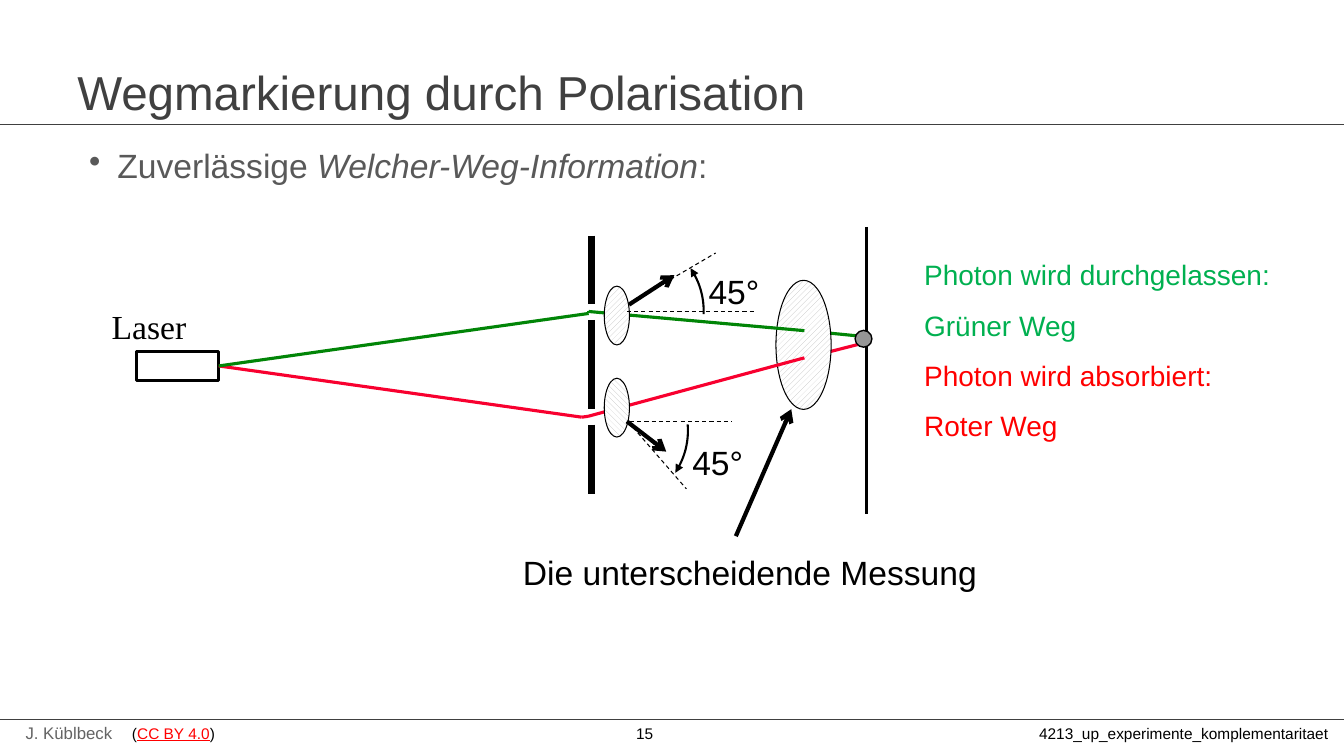
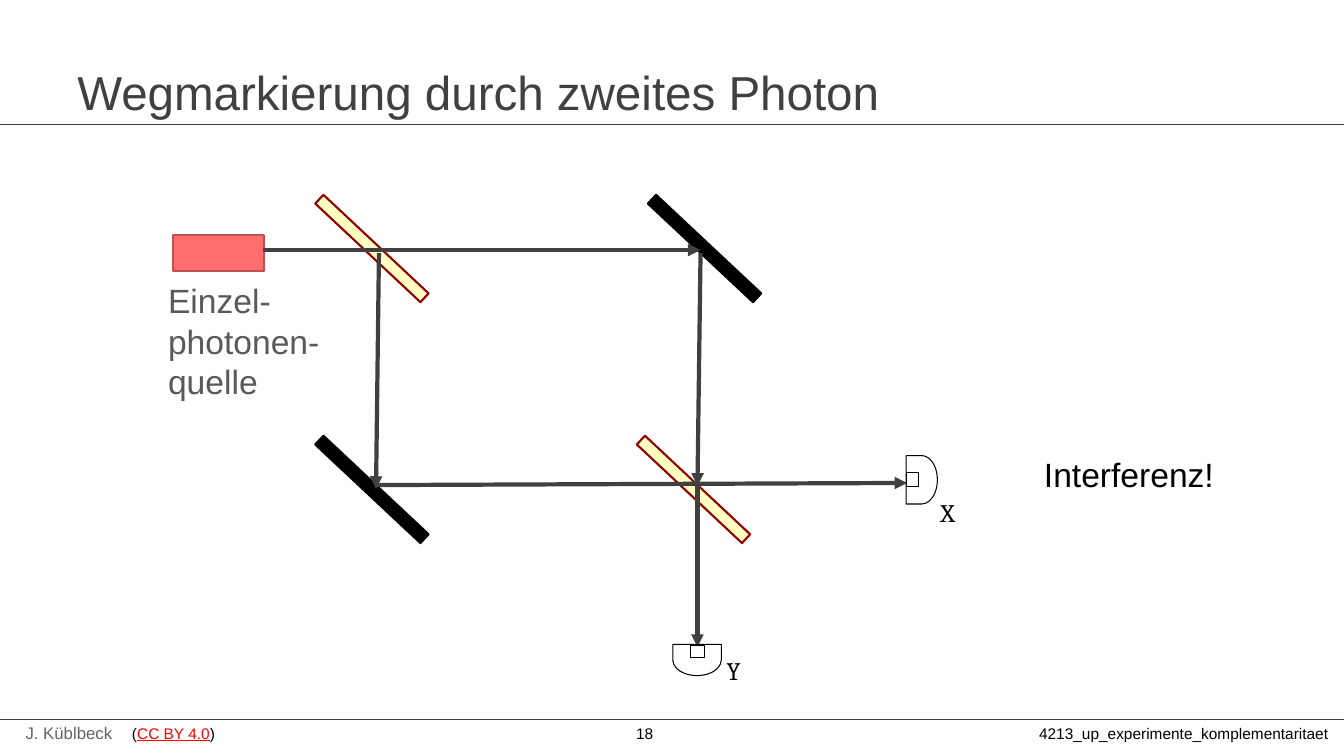
from pptx import Presentation
from pptx.dml.color import RGBColor
from pptx.enum import dml, shapes, text
from pptx.oxml.ns import qn
from pptx.util import Pt

WIDTH, HEIGHT = 960, 540
FONT = "Arial"
BLACK, WHITE, DARK, GREY = "000000", "FFFFFF", "404040", "595959"
GREEN, RED = "018507", "F8002F"
RECT, OVAL = shapes.MSO_SHAPE.RECTANGLE, shapes.MSO_SHAPE.OVAL


def colour(code):
    return RGBColor.from_string(code)


# Lines and shapes
def style_line(line, code, weight, head=None, dashed=False):
    line.color.rgb = colour(code)
    line.width = Pt(weight)
    if dashed:
        line.dash_style = dml.MSO_LINE.DASH
    if head:
        outline = line._get_or_add_ln()
        outline.append(outline.makeelement(qn("a:tailEnd"), {"type": head}))


def add_line(page, start, end, code=BLACK, weight=2.25, head=None, dashed=False):
    ends = [Pt(value) for value in (*start, *end)]
    connector = page.shapes.add_connector(shapes.MSO_CONNECTOR.STRAIGHT, *ends)
    properties = connector._element.spPr
    style_line(connector.line, code, weight, head, dashed)
    properties.append(properties.makeelement(qn("a:effectLst"), {}))
    return connector


def add_shape(page, kind, centre, size, fill=WHITE, line=BLACK, weight=0.75, rotation=0):
    (x, y), (width, height) = centre, size
    shape = page.shapes.add_shape(
        kind, Pt(x - width / 2), Pt(y - height / 2), Pt(width), Pt(height))
    shape.shadow.inherit = False
    shape.rotation = rotation
    shape.fill.solid()
    shape.fill.fore_color.rgb = colour(fill)
    style_line(shape.line, line, weight)
    return shape


def add_filter(page, centre, size, pattern=dml.MSO_PATTERN.WIDE_UPWARD_DIAGONAL):
    """Polarising filter: a hatched ellipse."""
    fill = add_shape(page, OVAL, centre, size).fill
    fill.patterned()
    fill.pattern = pattern
    fill.fore_color.rgb = colour("C0C0C0")
    fill.back_color.rgb = colour(WHITE)


def add_angle_arrow(page, start, bend, end, steps=16):
    """Curved arrow that leaves start, pulled towards bend."""
    points = []
    for step in range(steps + 1):
        t = step / steps
        points.append([Pt((1 - t) ** 2 * a + 2 * t * (1 - t) * b + t * t * c)
                       for a, b, c in zip(start, bend, end)])
    builder = page.shapes.build_freeform(*points[0])
    builder.add_line_segments(points[1:], close=False)
    arc = builder.convert_to_shape()
    arc.shadow.inherit = False
    arc.fill.background()
    style_line(arc.line, BLACK, 1.5, "triangle")


# Text
def style_font(font, size, code, name=FONT):
    font.name, font.size = name, Pt(size)
    font.color.rgb = colour(code)


def add_text(page, area, spans, size=24, code=BLACK, name=FONT, spacing=None,
             indent=0, before=0, inset=True, align=text.PP_ALIGN.LEFT):
    """One paragraph; spans is a list of strings. Returns the paragraph."""
    box = page.shapes.add_textbox(*[Pt(value) for value in area])
    frame = box.text_frame
    frame.word_wrap = True
    if not inset:
        frame.margin_left = frame.margin_right = 0
        frame.margin_top = frame.margin_bottom = 0
    para = frame.paragraphs[0]
    write_para(para, spans, size, code, name, spacing)
    para.alignment = align
    para.space_before = Pt(before)
    if indent:
        para._p.get_or_add_pPr().set("marL", str(Pt(indent)))
    return para


def write_para(para, spans, size, code, name=FONT, spacing=None):
    for words in spans:
        para.add_run().text = words
    style_font(para.font, size, code, name)
    if spacing:
        para.line_spacing = spacing


def add_bullet(para, hanging):
    properties = para._p.get_or_add_pPr()
    properties.set("indent", str(-Pt(hanging)))
    bullet = properties.makeelement(qn("a:buChar"), {"char": "•"})
    properties.insert_element_before(bullet, "a:tabLst", "a:defRPr", "a:extLst")


# Shared page frame: title, two rules, footer
def add_page(deck, title, number):
    page = deck.slides.add_slide(deck.slide_layouts[5])
    for y in (88.6, 514):
        add_line(page, (0, y), (WIDTH, y), DARK, 0.75)

    holder = page.shapes.title
    holder.left, holder.top, holder.width, holder.height = Pt(48), Pt(43), Pt(864), Pt(45)
    frame = holder.text_frame
    frame.text = title
    frame.auto_size = text.MSO_AUTO_SIZE.NONE
    frame.vertical_anchor = text.MSO_ANCHOR.MIDDLE
    frame.paragraphs[0].alignment = text.PP_ALIGN.LEFT
    style_font(frame.paragraphs[0].font, 34, DARK)

    add_text(page, (11.2, 512.6, 100, 22), ["J. Küblbeck"], 12, "646464")
    licence = add_text(page, (94.3, 517, 100, 14), ["(", "CC BY 4.0", ")"], 11, inset=False)
    link = licence.runs[1].font
    link.underline = True
    link.color.rgb = colour("FF0000")
    add_text(page, (454.3, 517, 40, 14), [str(number)], 11, inset=False)
    add_text(page, (649, 517, 300, 14), ["4213_up_experimente_komplementaritaet"], 11,
             inset=False, align=text.PP_ALIGN.RIGHT)
    return page


# Slide with double slit and polarising filters
def build_polarisation(deck):
    page = add_page(deck, "Wegmarkierung durch Polarisation", 15)
    intro = add_text(page, (48, 100, 864, 40),
                     ["Zuverlässige ", "Welcher-Weg-Information", ":"],
                     code=GREY, indent=28.8, before=3)
    intro.runs[1].font.italic = True
    add_bullet(intro, 20.2)

    # Beams behind and in front of the large filter
    add_line(page, (574.6, 236.2), (618.5, 240.5), GREEN)
    add_line(page, (581, 254.2), (617.8, 244.8), RED)
    add_filter(page, (574, 246.3), (39.4, 92.2))
    add_text(page, (72.7, 214.6, 110, 34), ["Laser"], name="Times New Roman")
    laser = add_shape(page, RECT, (127, 261.4), (58.6, 20.4), weight=2.25)
    for code, slit, bend, end in ((RED, (415.5, 298), (420, 297.4), (574.6, 255.6)),
                                  (GREEN, (420.5, 223.9), (420.5, 222.5), (574.6, 236.2))):
        add_line(page, (157, 262), slit, code).begin_connect(laser, 3)
        add_line(page, slit, bend, code)
        add_line(page, bend, end, code)
    add_filter(page, (440.6, 225.4), (18, 42))
    add_filter(page, (440.6, 291.2), (18, 42), dml.MSO_PATTERN.WIDE_DOWNWARD_DIAGONAL)

    # Double slit and screen
    for top, bottom in ((168.3, 217.4), (228.5, 292.3), (303.3, 352.6)):
        add_line(page, (422.6, top), (422.6, bottom), weight=4.5)
    add_line(page, (619, 162), (619, 367.2))
    add_shape(page, OVAL, (616.8, 242), (12, 12), "969696", weight=1)

    # Polarisation directions and their angles
    for start, end in (((449.3, 217.6), (481.7, 196.6)), ((447.8, 301), (475.9, 322.6)),
                       ((525.6, 383), (565.2, 292.3))):
        add_line(page, start, end, weight=3, head="arrow")
    for start, end in (((447.8, 222.5), (538.6, 222.5)), ((452.2, 215.3), (511.2, 180.7)),
                       ((450, 301), (522.7, 301)), ((452.2, 305.3), (490.3, 349.2))):
        add_line(page, start, end, weight=0.75, dashed=True)
    add_angle_arrow(page, (502.6, 224.3), (503.2, 206.5), (493.2, 191.5))
    add_angle_arrow(page, (491.2, 303.1), (492.7, 321.3), (482.4, 337.7))
    for left, top in ((499, 175.7), (487.4, 297.4)):
        add_text(page, (left, top, 60, 45), ["45°"], spacing=1.5)

    # Explanations
    add_text(page, (366.5, 376.6, 360, 45), ["Die unterscheidende Messung"], spacing=1.5)
    passed = add_text(page, (653, 168.5, 270, 148),
                      ["Photon wird durchgelassen: Grüner Weg"], 20, "00B050", spacing=1.5)
    absorbed = passed._parent.add_paragraph()
    write_para(absorbed, ["Photon wird absorbiert: Roter Weg"], 20, "FF0000", spacing=1.5)


# Slide with interferometer
def add_detector(page, centre, rotation, label, label_place):
    x, y = centre
    window = (x, y - 6.3) if rotation else (x - 6.3, y)
    add_shape(page, shapes.MSO_SHAPE.FLOWCHART_DELAY, centre, (22.3, 34.6), rotation=rotation)
    add_shape(page, RECT, window, (8.6, 10), rotation=rotation)
    add_text(page, (*label_place, 40, 29), [label], 18, name="Cambria")


def build_interferometer(deck):
    page = add_page(deck, "Wegmarkierung durch zweites Photon", 18)
    add_shape(page, RECT, (156.2, 180.7), (64.8, 26), "FF6D6D", "BD5151", 1.5)

    # Beam splitters and mirrors
    splitter, mirror = ("FFFFC1", "920000"), (BLACK, BLACK)
    for centre, (fill, line) in (((265.7, 177.5), splitter), ((503.3, 177.5), mirror),
                                 ((495.4, 349.6), splitter), ((265.7, 349.6), mirror)):
        add_shape(page, RECT, centre, (8.6, 103), fill, line, 1.5, rotation=313.15)

    # Light paths
    for start, end in (((188, 178.6), (500.4, 178.6)), ((268.6, 346.5), (648, 345)),
                       ((500.4, 180.7), (498.2, 347)), ((270.7, 180.7), (268.6, 349.2)),
                       ((498.2, 346.3), (498.2, 462.2))):
        add_line(page, start, end, DARK, 3, "triangle")

    add_detector(page, (658.4, 342.7), 0, "X", (664.6, 352))
    add_detector(page, (497.9, 471.4), 90, "Y", (511.9, 464.4))
    add_text(page, (730, 321, 204, 47), ["Interferenz!"], indent=8.6, before=3)
    add_text(page, (104.4, 196.6, 136.8, 104), ["Einzel-photonen-quelle"],
             code=GREY, indent=8.6, before=3)


def main():
    deck = Presentation()
    deck.slide_width, deck.slide_height = Pt(WIDTH), Pt(HEIGHT)
    build_polarisation(deck)
    build_interferometer(deck)
    deck.save("out.pptx")


if __name__ == "__main__":
    main()
